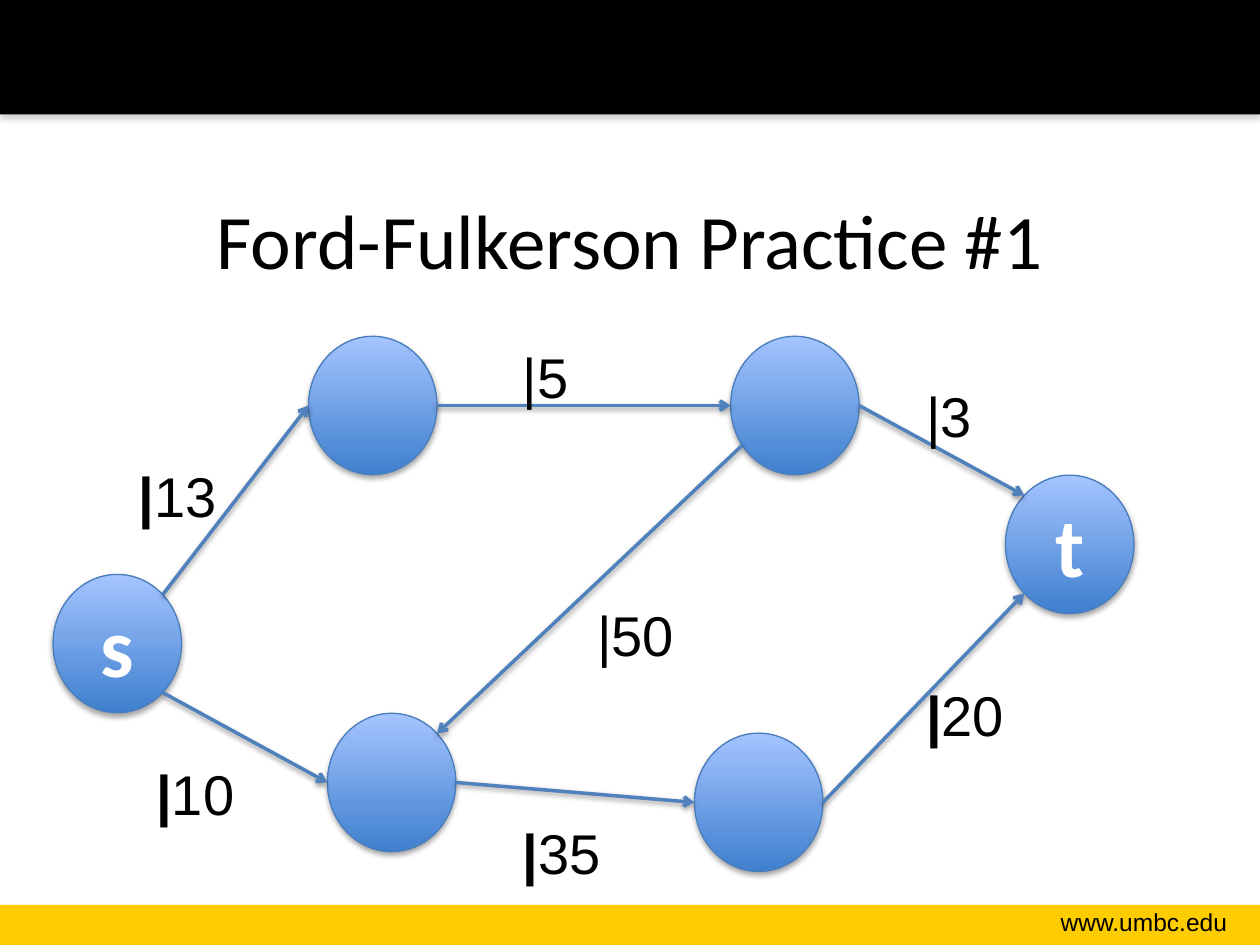
from math import cos, radians, sin

from lxml.etree import SubElement
from pptx import Presentation
from pptx.dml.color import RGBColor
from pptx.enum.shapes import MSO_CONNECTOR, MSO_SHAPE
from pptx.enum.text import MSO_ANCHOR, PP_ALIGN
from pptx.oxml.ns import qn
from pptx.util import Cm, Pt

COLORS = {
    "black": "000000", "white": "FFFFFF", "gold": "FFCC00", "gray": "808080",
    "node_bottom": "3F80CE", "node_top": "A4C4FF", "node_line": "4B7EBC",
    "edge": "4F81BD",
}
TITLE_FONT = {"name": "Calibri", "size": Pt(44)}
NODE_FONT = {"name": "Calibri", "size": Pt(48), "bold": True}
LABEL_FONT = {"name": "Arial", "size": Pt(32), "bold": False}
ADDRESS_FONT = {"name": "Arial", "size": Pt(14)}

NODE_W, NODE_H = 2.59, 2.79

# Corners in cm from the top left of the network: name -> (x, y, text)
NODES = {
    "s": (0, 4.8, "s"),
    "upper left": (5.15, 0, ""),
    "lower left": (5.53, 7.6, ""),
    "t": (19.2, 2.8, "t"),
    "lower right": (12.93, 8, ""),
    "upper right": (13.66, 0, ""),
}
# Start node, angle it leaves at, end node, angle it arrives at (clockwise from right)
EDGES = [
    ("s", -45, "upper left", 180),
    ("s", 45, "lower left", 180),
    ("upper left", 0, "upper right", 180),
    ("lower left", 0, "lower right", 180),
    ("lower right", 0, "t", 135),
    ("upper right", 0, "t", 225),
    ("upper right", 145, "lower left", -45),
]
# Capacity, x, y, width, bold bar
CAPACITIES = [
    ("13", 1.47, 2.39, 2.11, True),
    ("35", 9.22, 9.6, 2.11, True),
    ("5", 9.22, 0, 1.45, False),
    ("20", 17.35, 6.81, 3.33, True),
    ("10", 1.83, 8.41, 2.11, True),
    ("50", 10.72, 5.21, 2.08, False),
    ("3", 17.35, 0.79, 1.45, False),
]


def rgb(name):
    return RGBColor.from_string(COLORS[name])


def write(paragraph, text, style, color="black"):
    run = paragraph.add_run()
    run.text = text
    for key, value in style.items():
        setattr(run.font, key, value)
    run.font.color.rgb = rgb(color)


def add_shadow(properties, color, alpha, distance):
    effects = properties.find(qn("a:effectLst"))
    if effects is None:
        effects = SubElement(properties, qn("a:effectLst"))
    shadow = SubElement(effects, qn("a:outerShdw"), blurRad="40000",
                        dist=str(distance), dir="5400000", rotWithShape="0")
    tint = SubElement(shadow, qn("a:srgbClr"), val=COLORS[color])
    SubElement(tint, qn("a:alpha"), val=str(alpha * 1000))


def add_band(slide, left, top, width, height, color):
    band = slide.shapes.add_shape(MSO_SHAPE.RECTANGLE, Cm(left), Cm(top), Cm(width), Cm(height))
    band.fill.solid()
    band.fill.fore_color.rgb = rgb(color)
    band.line.fill.background()
    band.shadow.inherit = False
    return band


def add_header(slide, left, top, width, height):
    band = add_band(slide, left, top, width, height, "black")
    add_shadow(band.element.spPr, "gray", 35, 23000)


def add_footer(slide, left, top, width, height):
    add_band(slide, left, top, width, height, "gold")
    address = slide.shapes.add_textbox(Cm(left + width - 5.46), Cm(top - 0.08), Cm(5.05), Cm(0.86))
    address.text_frame.word_wrap = True
    line = address.text_frame.paragraphs[0]
    line.alignment = PP_ALIGN.RIGHT
    write(line, "www.umbc.edu", ADDRESS_FONT)


def add_title(slide, left, top, width, height):
    title = slide.shapes.title
    title.left, title.top, title.width, title.height = Cm(left), Cm(top), Cm(width), Cm(height)
    title.text_frame.vertical_anchor = MSO_ANCHOR.MIDDLE
    heading = title.text_frame.paragraphs[0]
    heading.alignment = PP_ALIGN.CENTER
    write(heading, "Ford-Fulkerson Practice #1", TITLE_FONT)


def add_node(slide, left, top, text):
    node = slide.shapes.add_shape(MSO_SHAPE.OVAL, Cm(left), Cm(top), Cm(NODE_W), Cm(NODE_H))
    node.fill.gradient()
    node.fill.gradient_angle = 90
    for stop, position, color in zip(node.fill.gradient_stops, (0, 1), ("node_bottom", "node_top")):
        stop.position = position
        stop.color.rgb = rgb(color)
    node.line.color.rgb = rgb("node_line")
    node.line.width = Pt(0.75)
    node.shadow.inherit = False
    add_shadow(node.element.spPr, "black", 35, 23000)
    if text:
        node.text_frame.vertical_anchor = MSO_ANCHOR.MIDDLE
        name = node.text_frame.paragraphs[0]
        name.alignment = PP_ALIGN.CENTER
        write(name, text, NODE_FONT, "white")


def rim_point(left, top, name, angle):
    """Point on the outline of a node at the given angle."""
    x, y, _ = NODES[name]
    return (Cm(left + x + NODE_W / 2 * (1 + cos(radians(angle)))),
            Cm(top + y + NODE_H / 2 * (1 + sin(radians(angle)))))


def add_edge(slide, start, end):
    edge = slide.shapes.add_connector(MSO_CONNECTOR.STRAIGHT, *start, *end)
    edge.line.color.rgb = rgb("edge")
    edge.line.width = Pt(2)
    properties = edge.element.spPr
    SubElement(properties.find(qn("a:ln")), qn("a:tailEnd"), type="arrow")
    add_shadow(properties, "black", 38, 20000)


def add_capacity(slide, left, top, width, value, bold_bar):
    label = slide.shapes.add_textbox(Cm(left), Cm(top), Cm(width), Cm(1.62))
    label.text_frame.word_wrap = False
    line = label.text_frame.paragraphs[0]
    if bold_bar:
        write(line, "|", {**LABEL_FONT, "bold": True})
        write(line, value, LABEL_FONT)
    else:
        write(line, "|" + value, LABEL_FONT)


def add_network(slide, left, top):
    for x, y, text in NODES.values():
        add_node(slide, left + x, top + y, text)
    for start, leaving, end, arriving in EDGES:
        add_edge(slide, rim_point(left, top, start, leaving), rim_point(left, top, end, arriving))
    for value, x, y, width, bold_bar in CAPACITIES:
        add_capacity(slide, left + x, top + y, width, value, bold_bar)


def main():
    deck = Presentation()
    deck.slide_width, deck.slide_height = Cm(25.4), Cm(19.05)
    slide = deck.slides.add_slide(deck.slide_layouts[5])

    # Bands at the top and bottom
    add_footer(slide, 0, 18.24, 25.4, 0.81)
    add_header(slide, 0, 0, 25.4, 2.31)

    # Title and flow network
    add_title(slide, 1.27, 3.23, 22.86, 3.18)
    add_network(slide, 1.07, 6.78)

    deck.save("out.pptx")


if __name__ == "__main__":
    main()
